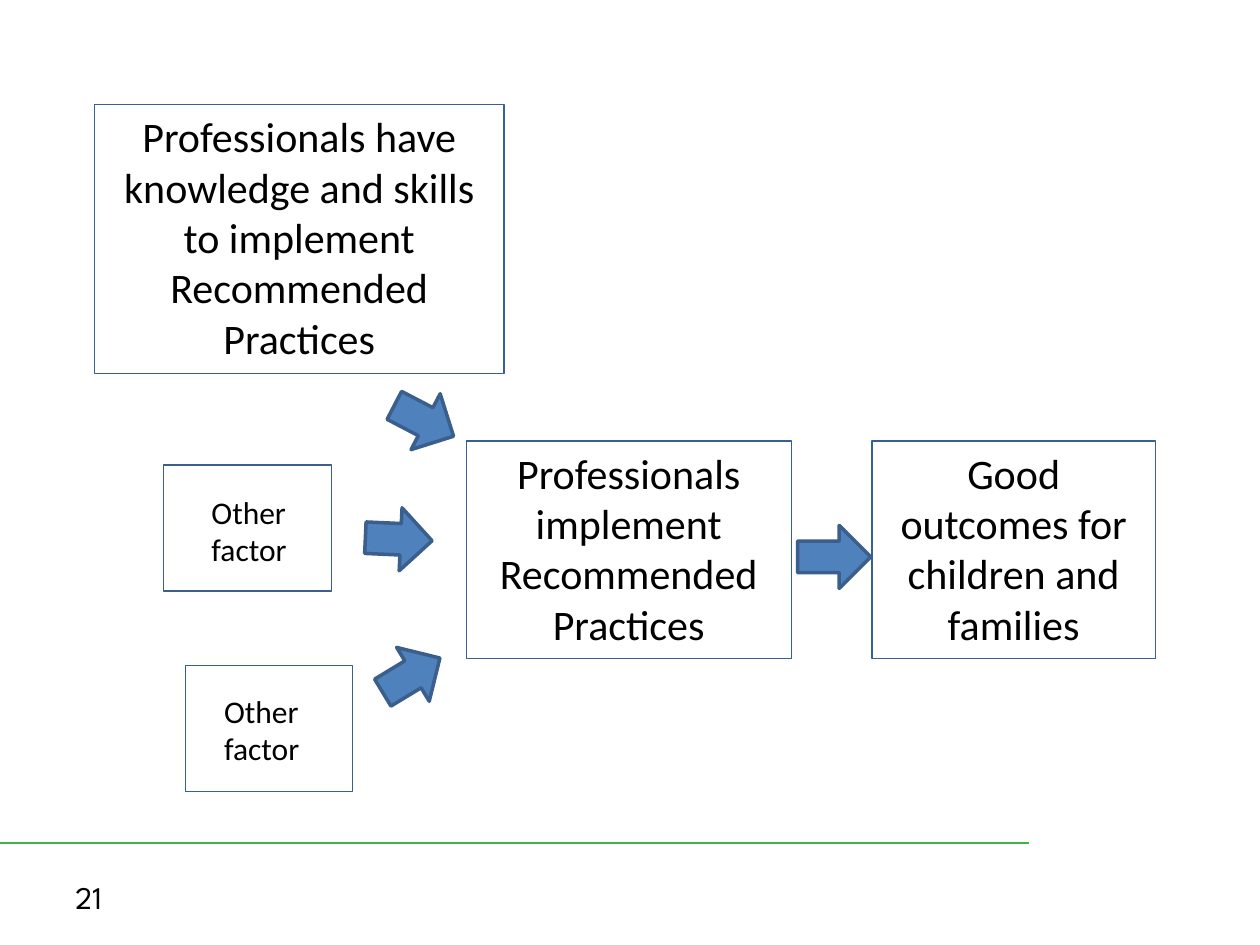
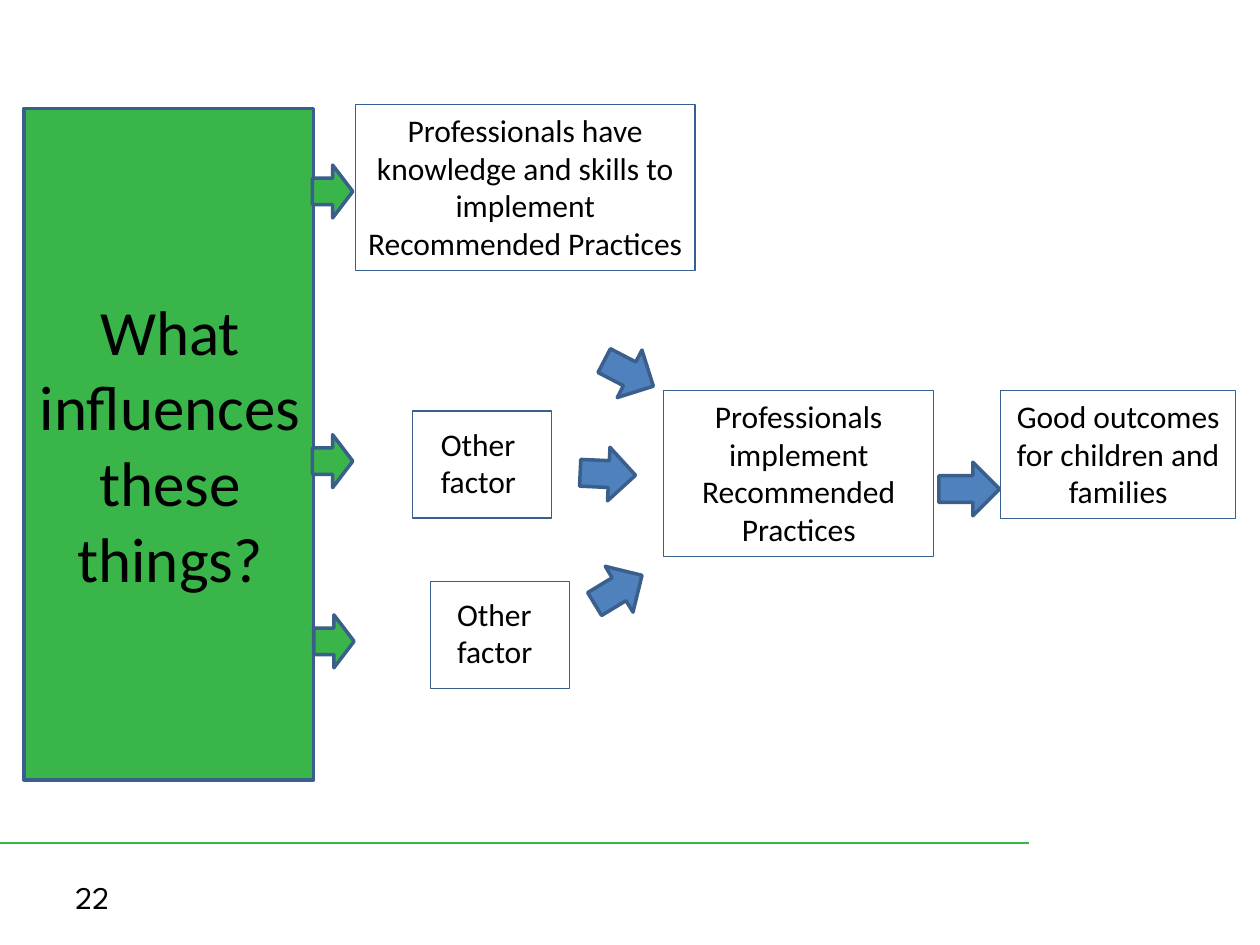
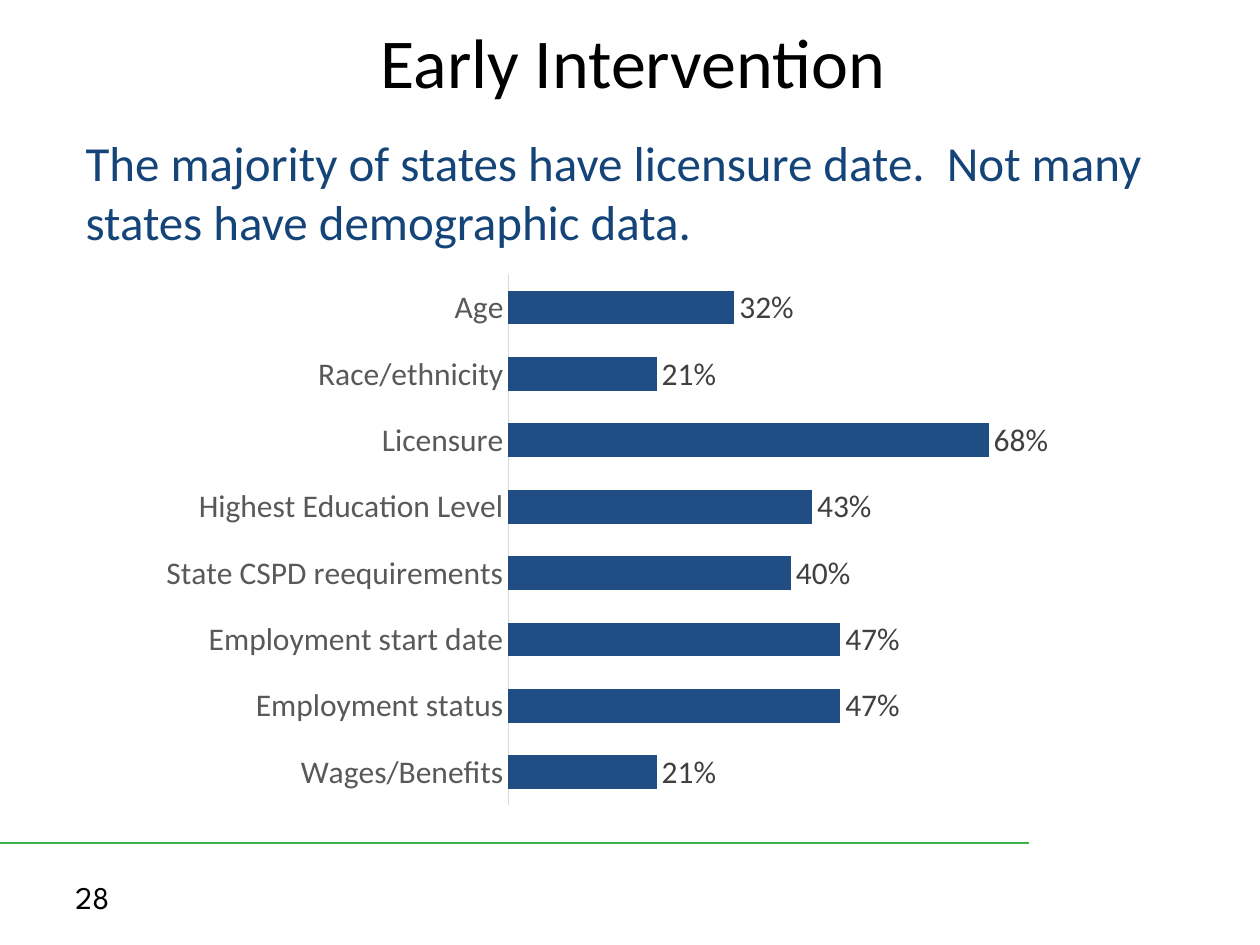
"""Builds three slides on professional practice and early intervention data."""
from lxml import etree
from pptx import Presentation
from pptx import util as u
from pptx.chart import data as chart_data
from pptx.dml.color import RGBColor
from pptx.enum import chart as charts, shapes, text
from pptx.oxml import ns

BLACK = RGBColor(0x00, 0x00, 0x00)
GREEN = RGBColor(0x39, 0xB5, 0x4A)
BLUE = RGBColor(0x4F, 0x81, 0xBD)
BOX_EDGE = RGBColor(0x37, 0x60, 0x92)
ARROW_EDGE = RGBColor(0x3A, 0x5F, 0x8C)
STATEMENT = RGBColor(0x15, 0x45, 0x78)
BAR = RGBColor(0x20, 0x4D, 0x84)
AXIS_LINE = RGBColor(0xD9, 0xD9, 0xD9)
AXIS_TEXT = RGBColor(0x59, 0x59, 0x59)
LABEL_TEXT = RGBColor(0x40, 0x40, 0x40)
FONT, NUMBER_FONT = "Calibri", "League Spartan"
RECTANGLE = shapes.MSO_SHAPE.RECTANGLE
ARROW = shapes.MSO_SHAPE.RIGHT_ARROW
LEFT, CENTER = text.PP_ALIGN.LEFT, text.PP_ALIGN.CENTER

# Statements and factors are (left, top, width); arrows are (left, top, width, turn).
STATEMENTS = [
    ("Good outcomes for children and families", 6.92, 3.5, 2.25),
    ("Professionals implement Recommended Practices", 3.7, 3.5, 2.58),
    ("Professionals have knowledge and skills to implement Recommended Practices", 0.75, 0.83, 3.25),
]
ARROWS = [(6.33, 4.17, 0.58, 0), (3.1, 3.09, 0.53, 27.5),
          (2.9, 4.03, 0.53, 2.6), (3, 5.11, 0.53, 328.8)]
FACTORS = [(1.3, 3.69), (1.47, 5.28)]
ORIGIN = (0.75, 0.83)

FULL_DIAGRAM = {
    "start": ORIGIN, "scale": (1, 1), "size": 24, "lines": (4, 4, 5),
    "labels": [(1.58, 3.86, 0.92), (1.68, 5.44, 0.92)],
}
SMALL_DIAGRAM = {
    "start": (2.82, 0.83), "scale": (0.83, 0.85), "size": 18, "lines": (3, 4, 4),
    "labels": [(3.4, 3.32, 1.07), (3.53, 4.67, 0.94)],
}
QUESTION = ["What influences ", "these things?"]
INFLUENCE_ARROWS = [(2.48, 1.31), (2.48, 3.45), (2.49, 4.88)]

TITLE = "Early Intervention"
FINDING = "The majority of states have licensure date.  Not many states have demographic data."
DATA_SHARES = {
    "Age": 0.32, "Race/ethnicity": 0.21, "Licensure": 0.68, "Highest Education Level": 0.43,
    "State CSPD reequirements": 0.4, "Employment start date": 0.47,
    "Employment status": 0.47, "Wages/Benefits": 0.21,
}


def inches(*lengths):
    return [u.Inches(length) for length in lengths]


def text_height(lines, size):
    return 0.1 + lines * size * 1.22 / 72


def style_font(font, size, color=BLACK, name=FONT):
    for key, value in {"size": u.Pt(size), "name": name, "bold": False}.items():
        setattr(font, key, value)
    font.color.rgb = color


def write(shape, paragraphs, size, color=BLACK, name=FONT, align=LEFT,
          anchor=text.MSO_ANCHOR.TOP, fit=text.MSO_AUTO_SIZE.SHAPE_TO_FIT_TEXT):
    frame = shape.text_frame
    frame.text = "\n".join(paragraphs)
    for key, value in {"word_wrap": True, "auto_size": fit, "vertical_anchor": anchor}.items():
        setattr(frame, key, value)
    for para in frame.paragraphs:
        para.alignment, para.space_before = align, u.Pt(0)
        for span in para.runs:
            style_font(span.font, size, color, name)


def add_text(target, place, paragraphs, size, **formats):
    write(target.add_textbox(*inches(*place)), paragraphs, size, **formats)


def add_outline(target, kind, place, fill=None, edge=ARROW_EDGE, weight=2, turn=0):
    shape = target.add_shape(kind, *inches(*place))
    shape.shadow.inherit = False
    shape.rotation = turn
    if fill is None:
        shape.fill.background()
    else:
        shape.fill.solid()
        shape.fill.fore_color.rgb = fill
    shape.line.color.rgb, shape.line.width = edge, u.Pt(weight)
    return shape


def add_page(deck, layout, number):
    page = deck.slides.add_slide(deck.slide_layouts[layout])
    rule = page.shapes.add_connector(shapes.MSO_CONNECTOR.STRAIGHT, *inches(0, 6.69, 8.17, 6.69))
    rule.line.color.rgb, rule.line.width = GREEN, u.Pt(1.5)
    etree.SubElement(rule._element.spPr, ns.qn("a:effectLst"))
    add_text(page.shapes, (0.5, 6.92, 2.33, 0.4), [str(number)], 18, name=NUMBER_FONT,
             anchor=text.MSO_ANCHOR.MIDDLE, fit=text.MSO_AUTO_SIZE.NONE)
    return page


def add_diagram(target, diagram):
    (start_x, start_y), (scale_x, scale_y) = diagram["start"], diagram["scale"]
    size = diagram["size"]

    def place(left, top, width, height):
        return (start_x + (left - ORIGIN[0]) * scale_x, start_y + (top - ORIGIN[1]) * scale_y,
                width * scale_x, height * scale_y)

    for (words, left, top, width), lines in zip(STATEMENTS, diagram["lines"]):
        spot = place(left, top, width, 0)[:3] + (text_height(lines, size),)
        box = add_outline(target, RECTANGLE, spot, edge=BOX_EDGE, weight=0.75)
        write(box, [words], size, align=CENTER)
    for left, top, width, turn in ARROWS:
        add_outline(target, ARROW, place(left, top, width, 0.5), BLUE, turn=turn)
    for left, top in FACTORS:
        add_outline(target, RECTANGLE, place(left, top, 1.33, 1), weight=0.75)
    for label in diagram["labels"]:
        add_text(target, label + (text_height(2, 18),), ["Other factor"], 18)


def fill_placeholder(holder, place, words, size, color):
    holder.left, holder.top, holder.width, holder.height = inches(*place)
    write(holder, [words], size, color)
    for para in holder.text_frame.paragraphs:
        properties = para._p.get_or_add_pPr()
        properties.set("marL", "0")
        properties.set("indent", "0")
        etree.SubElement(properties, ns.qn("a:buNone"))


def add_share_chart(page):
    shares = chart_data.CategoryChartData(number_format="0%")
    shares.categories = list(DATA_SHARES)
    shares.add_series("Series 1", list(DATA_SHARES.values()))
    chart = page.shapes.add_chart(charts.XL_CHART_TYPE.BAR_CLUSTERED,
                                  *inches(1.17, 2.09, 7.5, 4.39), shares).chart
    chart.has_legend = chart.has_title = False
    style_font(chart.font, 10)

    names = chart.category_axis
    for key, value in {"reverse_order": True, "has_major_gridlines": False,
                       "major_tick_mark": charts.XL_TICK_MARK.NONE}.items():
        setattr(names, key, value)
    style_font(names.tick_labels.font, 18, AXIS_TEXT)
    names.format.line.color.rgb, names.format.line.width = AXIS_LINE, u.Pt(0.75)
    for key, value in {"visible": False, "has_major_gridlines": False,
                       "minimum_scale": 0, "maximum_scale": 0.8}.items():
        setattr(chart.value_axis, key, value)

    plot = chart.plots[0]
    plot.gap_width, plot.vary_by_categories = 97, False
    bars = plot.series[0]
    bars.format.fill.solid()
    bars.format.fill.fore_color.rgb = BAR
    labels = bars.data_labels
    for key, value in {"show_value": True, "number_format": "0%", "number_format_is_linked": False,
                       "position": charts.XL_LABEL_POSITION.OUTSIDE_END}.items():
        setattr(labels, key, value)
    style_font(labels.font, 18, LABEL_TEXT)


def main():
    deck = Presentation()
    deck.slide_width, deck.slide_height = inches(10, 7.5)

    page = add_page(deck, 6, 21)
    add_diagram(page.shapes, FULL_DIAGRAM)

    page = add_page(deck, 6, 22)
    add_diagram(page.shapes.add_group_shape().shapes, SMALL_DIAGRAM)
    add_outline(page.shapes, RECTANGLE, (0.19, 0.86, 2.3, 5.33), GREEN)
    add_text(page.shapes, (0.2, 2.27, 2.3, 2.52), QUESTION, 36, align=CENTER)
    for left, top in INFLUENCE_ARROWS:
        add_outline(page.shapes, ARROW, (left, top, 0.32, 0.42), GREEN)

    page = add_page(deck, 1, 28)
    fill_placeholder(page.placeholders[1], (0.58, 1, 9, 1.04), FINDING, 28, STATEMENT)
    fill_placeholder(page.shapes.title, (2.92, 0.1, 4.33, 0.77), TITLE, 40, BLACK)
    add_share_chart(page)

    deck.save("out.pptx")


if __name__ == "__main__":
    main()
